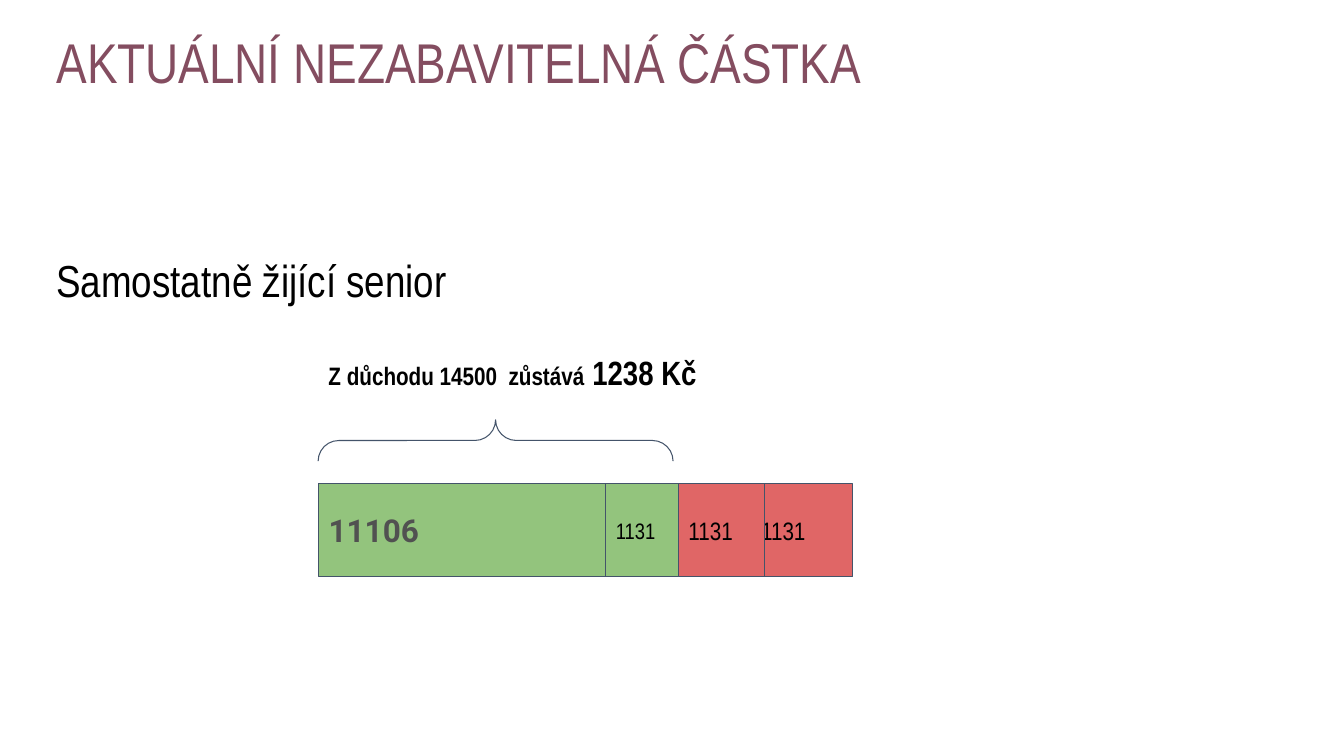
from dataclasses import dataclass

from lxml.etree import SubElement
from pptx import Presentation
from pptx.dml.color import RGBColor
from pptx.enum.shapes import MSO_SHAPE
from pptx.enum.text import MSO_ANCHOR, MSO_AUTO_SIZE, PP_ALIGN
from pptx.oxml.ns import qn
from pptx.shapes.base import BaseShape
from pptx.slide import Slide
from pptx.text.text import Font, TextFrame
from pptx.util import Inches, Pt

BLACK = "000000"
PLUM = "844D60"
GREY = "515151"
GREEN = "93C47D"
RED = "E06666"
OUTLINE = "44546A"
NARROW = "Arial Narrow"

BAR_TOP = 4.8
BAR_HEIGHT = 0.92


@dataclass(frozen=True)
class Segment:
    left: float
    width: float
    fill: str
    amount: str
    size: float = 18
    font_name: str = NARROW
    color: str = BLACK
    bold: bool = False


# The wide red segment lies under its left neighbour, so it is drawn first.
SEGMENTS = [
    Segment(3.16, 2.85, GREEN, "11106", 22.5, "Roboto", GREY, True),
    Segment(7.45, 1.01, RED, "1131"),
    Segment(6.73, 0.85, RED, "1131"),
    Segment(6.01, 0.72, GREEN, "1131", 16),
]


def rgb(color: str) -> RGBColor:
    return RGBColor.from_string(color)


def format_font(font: Font, size: float, color: str = BLACK,
                name: str = NARROW, bold: bool = False) -> None:
    font.name = name
    font.size = Pt(size)
    font.bold = bold
    font.color.rgb = rgb(color)


def set_margins(frame: TextFrame, horizontal: float, vertical: float) -> None:
    frame.margin_left = frame.margin_right = Inches(horizontal)
    frame.margin_top = frame.margin_bottom = Inches(vertical)


def place(shape: BaseShape, left: float, top: float, width: float, height: float) -> None:
    shape.left, shape.top = Inches(left), Inches(top)
    shape.width, shape.height = Inches(width), Inches(height)


def fill_placeholder(shape: BaseShape, text: str, size: float, color: str,
                     anchor: MSO_ANCHOR) -> None:
    frame = shape.text_frame
    frame.text = text
    frame.auto_size = MSO_AUTO_SIZE.NONE
    frame.vertical_anchor = anchor
    set_margins(frame, 0.1, 0.05)
    paragraph = frame.paragraphs[0]
    paragraph.alignment = PP_ALIGN.LEFT
    paragraph.line_spacing = 0.9
    paragraph.space_before = Pt(0)
    properties = paragraph._p.get_or_add_pPr()
    properties.set("marL", "0")
    properties.set("indent", "0")
    SubElement(properties, qn("a:buNone"))
    format_font(paragraph.font, size, color)


def outline(shape: BaseShape) -> None:
    shape.shadow.inherit = False
    shape.line.color.rgb = rgb(OUTLINE)
    shape.line.width = Pt(0.75)


def add_segment(slide: Slide, segment: Segment) -> None:
    shape = slide.shapes.add_shape(
        MSO_SHAPE.RECTANGLE, Inches(segment.left), Inches(BAR_TOP),
        Inches(segment.width), Inches(BAR_HEIGHT))
    outline(shape)
    shape.fill.solid()
    shape.fill.fore_color.rgb = rgb(segment.fill)
    frame = shape.text_frame
    frame.text = segment.amount
    frame.vertical_anchor = MSO_ANCHOR.MIDDLE
    set_margins(frame, 0.1, 0.1)
    paragraph = frame.paragraphs[0]
    paragraph.alignment = PP_ALIGN.LEFT
    format_font(paragraph.font, segment.size, segment.color, segment.font_name, segment.bold)


def add_brace(slide: Slide) -> None:
    brace = slide.shapes.add_shape(
        MSO_SHAPE.LEFT_BRACE, Inches(4.71), Inches(2.61), Inches(0.41), Inches(3.52))
    brace.rotation = 90
    brace.adjustments[0] = 0.5
    brace.adjustments[1] = 0.5
    brace.fill.background()
    outline(brace)


def add_remainder_label(slide: Slide) -> None:
    label = slide.shapes.add_textbox(Inches(3.16), Inches(3.39), Inches(4.66), Inches(0.61))
    frame = label.text_frame
    frame.word_wrap = True
    frame.auto_size = MSO_AUTO_SIZE.SHAPE_TO_FIT_TEXT
    set_margins(frame, 0.1, 0.1)
    paragraph = frame.paragraphs[0]
    for text, size in (("Z důchodu 14500  zůstává", 18), (" 1238 Kč", 24)):
        run = paragraph.add_run()
        run.text = text
        format_font(run.font, size, bold=True)


def main() -> None:
    presentation = Presentation()
    presentation.slide_width = Inches(13.33)
    presentation.slide_height = Inches(7.5)
    slide = presentation.slides.add_slide(presentation.slide_layouts[1])

    title, body = slide.shapes.title, slide.placeholders[1]
    place(title, 0.46, -0.08, 11.5, 1.45)
    fill_placeholder(title, "AKTUÁLNÍ NEZABAVITELNÁ ČÁSTKA", 40, PLUM, MSO_ANCHOR.MIDDLE)
    place(body, 0.46, 2.52, 10.08, 4.19)
    fill_placeholder(body, "Samostatně žijící senior", 32, BLACK, MSO_ANCHOR.TOP)

    for segment in SEGMENTS:
        add_segment(slide, segment)
    add_brace(slide)
    add_remainder_label(slide)
    presentation.save("out.pptx")


if __name__ == "__main__":
    main()
